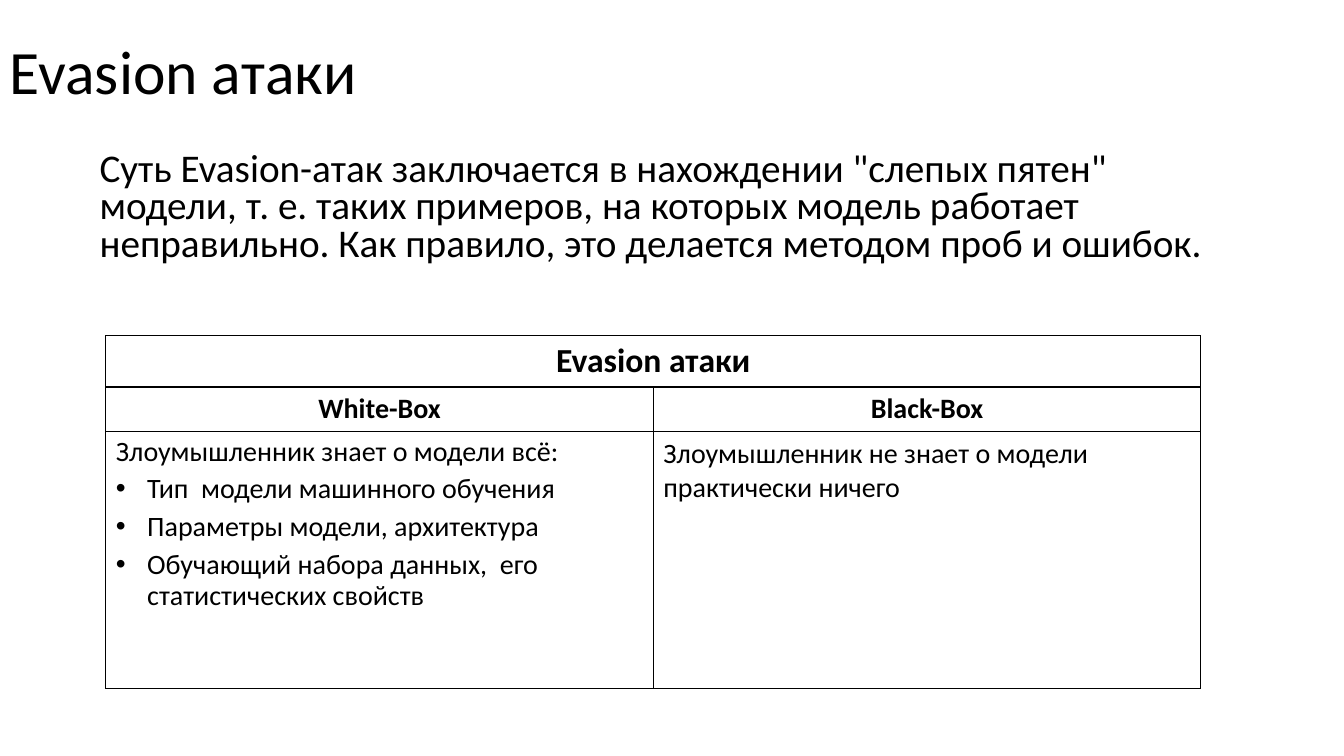
"""Builds the slide on evasion attacks with a White-Box / Black-Box table."""
import pptx
import pptx.dml.color
import pptx.enum.text
import pptx.oxml
import pptx.oxml.ns
import pptx.util
from pptx.util import Inches, Pt

TITLE = "Evasion атаки"
ESSENCE = ('Суть Evasion-атак заключается в нахождении "слепых пятен" модели, т. е. таких примеров, '
           "на которых модель работает неправильно. Как правило, это делается методом проб и ошибок.")
TABLE_HEADING = "Evasion атаки"
BOX_KINDS = ["White-Box", "Black-Box"]
WHITE_BOX_INTRO = "Злоумышленник знает о модели всё: "
WHITE_BOX_KNOWLEDGE = [
    "Тип  модели машинного обучения",
    "Параметры модели, архитектура",
    "Обучающий набора данных,  его статистических свойств",
]
BLACK_BOX_INTRO = "Злоумышленник не знает о модели практически ничего"

FONT = "Calibri"
BLACK = pptx.dml.color.RGBColor(0, 0, 0)
CENTER = pptx.enum.text.PP_ALIGN.CENTER
LEFT = pptx.enum.text.PP_ALIGN.LEFT
ROW_HEIGHTS = [0.51, 0.44, 2.55]
COLUMN_WIDTH = 5.43
BULLET_INDENT = 0.31


def write(paragraph, text, size, bold=False, align=LEFT, spacing=None, before=None):
    paragraph.alignment = align
    if spacing:
        paragraph.line_spacing = spacing
    if before:
        paragraph.space_before = Pt(before)
    run = paragraph.add_run()
    run.text = text
    run.font.name = FONT
    run.font.size = Pt(size)
    run.font.bold = bold
    run.font.color.rgb = BLACK


def add_xml(parent, tag, **attributes):
    child = pptx.oxml.parse_xml(f"<a:{tag} {pptx.oxml.ns.nsdecls('a')}/>")
    for key, value in attributes.items():
        child.set(key, str(value))
    parent.append(child)
    return child


def add_bullet(paragraph):
    properties = paragraph._p.get_or_add_pPr()
    indent = Inches(BULLET_INDENT)
    properties.set("marL", str(indent))
    properties.set("indent", str(-indent))
    add_xml(properties, "buFont", typeface="Arial")
    add_xml(properties, "buChar", char="•")


def style_cell(cell):
    properties = cell._tc.get_or_add_tcPr()
    for side in ("lnL", "lnR", "lnT", "lnB"):
        border = add_xml(properties, side, w=Pt(1))
        add_xml(add_xml(border, "solidFill"), "srgbClr", val=BLACK)
    cell.fill.background()


def add_text(slide, text, box, size, spacing, before=None, anchor=pptx.enum.text.MSO_ANCHOR.TOP):
    frame = slide.shapes.add_textbox(*map(Inches, box)).text_frame
    frame.word_wrap = True
    frame.vertical_anchor = anchor
    write(frame.paragraphs[0], text, size, spacing=spacing, before=before)


def add_attack_table(slide):
    rows, columns = len(ROW_HEIGHTS), len(BOX_KINDS)
    attacks = slide.shapes.add_table(
        rows, columns, Inches(1.05), Inches(3.33),
        Inches(COLUMN_WIDTH * columns), Inches(sum(ROW_HEIGHTS))).table
    attacks.first_row = attacks.horz_banding = False
    for row, height in zip(attacks.rows, ROW_HEIGHTS):
        row.height = Inches(height)
    for column in attacks.columns:
        column.width = Inches(COLUMN_WIDTH)
    for cell in attacks.iter_cells():
        style_cell(cell)

    heading = attacks.cell(0, 0)
    heading.merge(attacks.cell(0, columns - 1))
    write(heading.text_frame.paragraphs[0], TABLE_HEADING, 24, True, CENTER)
    for index, kind in enumerate(BOX_KINDS):
        write(attacks.cell(1, index).text_frame.paragraphs[0], kind, 20, True, CENTER)

    white_box = attacks.cell(2, 0).text_frame
    write(white_box.paragraphs[0], WHITE_BOX_INTRO, 20, spacing=0.9, before=10)
    for knowledge in WHITE_BOX_KNOWLEDGE:
        paragraph = white_box.add_paragraph()
        write(paragraph, knowledge, 20, spacing=0.9, before=5)
        add_bullet(paragraph)
    write(attacks.cell(2, 1).text_frame.paragraphs[0], BLACK_BOX_INTRO, 20)


def main():
    deck = pptx.Presentation()
    deck.slide_width, deck.slide_height = Inches(13.33), Inches(7.5)
    slide = deck.slides.add_slide(deck.slide_layouts[6])
    add_text(slide, TITLE, (0, 0.01, 11.5, 1.45), 44, 0.9,
             anchor=pptx.enum.text.MSO_ANCHOR.MIDDLE)
    add_text(slide, ESSENCE, (0.89, 1.46, 11.5, 1.22), 28, 0.8, before=10)
    add_attack_table(slide)
    deck.save("out.pptx")


if __name__ == "__main__":
    main()
